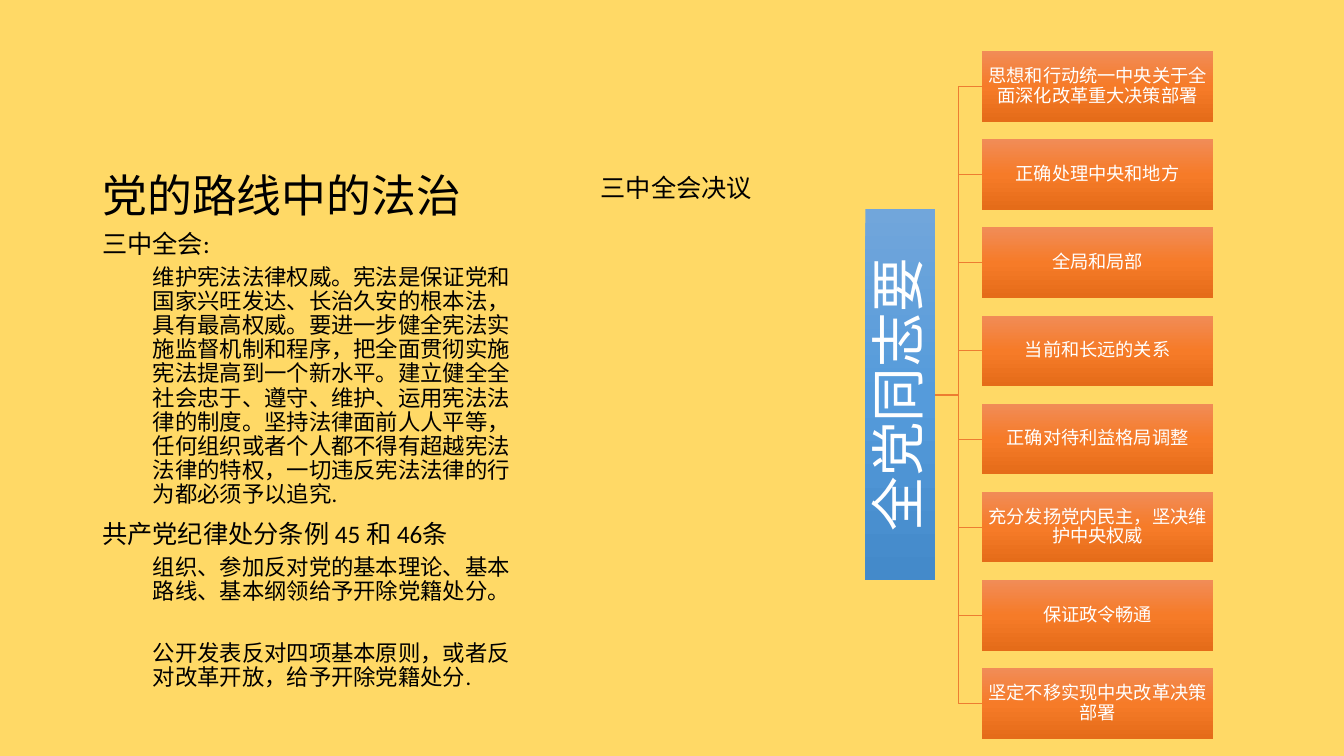
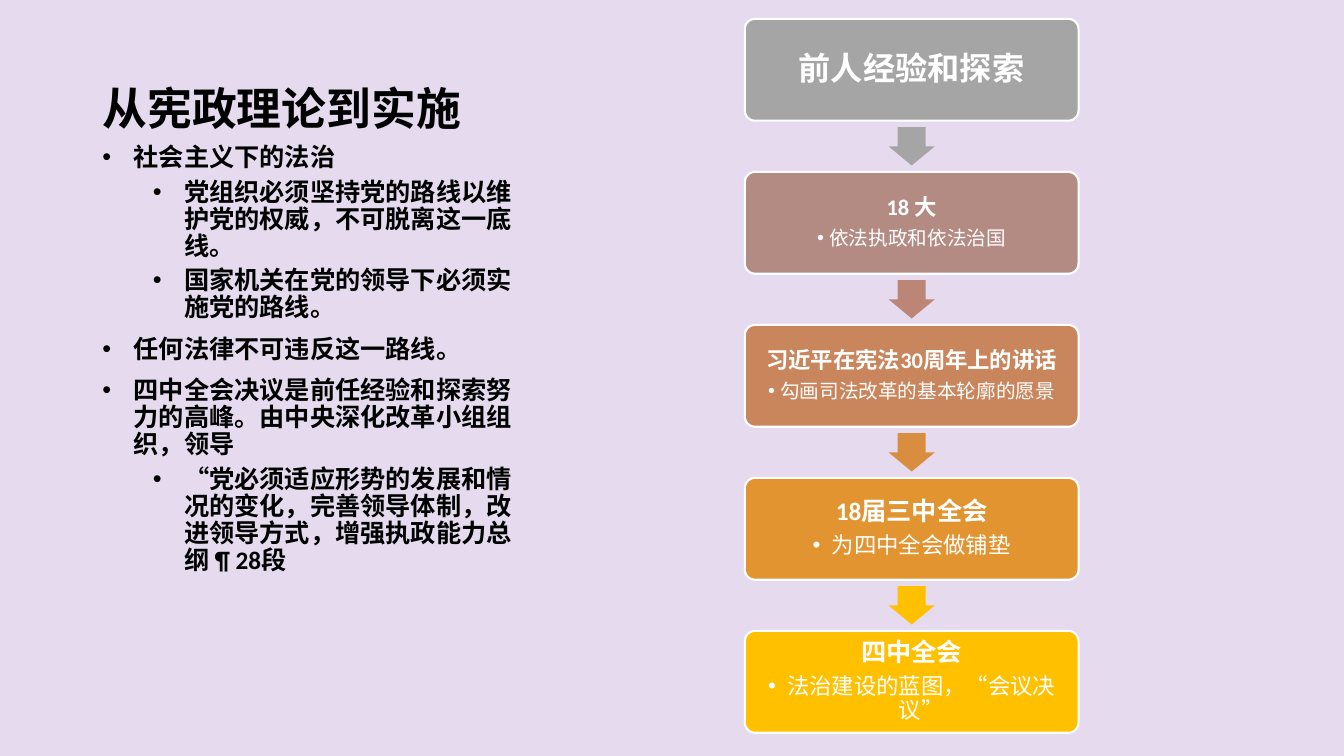
from lxml import etree
from pptx import Presentation
from pptx.dml.color import RGBColor
from pptx.enum.lang import MSO_LANGUAGE_ID as Language
from pptx.enum.shapes import MSO_CONNECTOR as Connector, MSO_SHAPE as Shape
from pptx.enum.text import MSO_ANCHOR as Anchor, MSO_AUTO_SIZE as AutoSize, PP_ALIGN as Align
from pptx.oxml.ns import qn
from pptx.util import Inches, Pt

WIDTH, HEIGHT = Inches(13.33), Inches(7.5)
FONT = "Calibri"
BLACK, WHITE = "000000", "FFFFFF"
YELLOW, LILAC, ORANGE = "FFD966", "E5DAEE", "ED7D31"
BLUE_GRADIENT = ("71A6DB", "559BDB", "448ACA")
ORANGE_GRADIENT = ("F18C57", "F67B28", "E56C19")
TITLE_ONLY = 5
RIGHT_SITE, LEFT_SITE = 3, 1

# Text column, in percent of the slide's width and height
TEXT_LEFT, TEXT_WIDTH = 6.88, 32.25
TITLE_TOP, TEXT_BOTTOM = 6.67, 97.5

RULE_OF_LAW = [
    (0, "三中全会:", 0),
    (1, "维护宪法法律权威。宪法是保证党和国家兴旺发达、长治久安的根本法，具有最高权威。"
        "要进一步健全宪法实施监督机制和程序，把全面贯彻实施宪法提高到一个新水平。"
        "建立健全全社会忠于、遵守、维护、运用宪法法律的制度。坚持法律面前人人平等，"
        "任何组织或者个人都不得有超越宪法法律的特权，一切违反宪法法律的行为都必须予以追究.", 5),
    (0, "共产党纪律处分条例 45 和 46条", 10),
    (1, "组织、参加反对党的基本理论、基本路线、基本纲领给予开除党籍处分。", 5),
    (1, "公开发表反对四项基本原则，或者反对改革开放，给予开除党籍处分.", 27),
]
DUTIES = [
    "思想和行动统一中央关于全面深化改革重大决策部署",
    "正确处理中央和地方",
    "全局和局部",
    "当前和长远的关系",
    "正确对待利益格局调整",
    "充分发扬党内民主，坚决维护中央权威",
    "保证政令畅通",
    "坚定不移实现中央改革决策部署",
]
THEORY = [
    (0, "社会主义下的法治", 0),
    (1, "党组织必须坚持党的路线以维护党的权威，不可脱离这一底线。", 5),
    (1, "国家机关在党的领导下必须实施党的路线。", 5),
    (0, "任何法律不可违反这一路线。", 10),
    (0, "四中全会决议是前任经验和探索努力的高峰。由中央深化改革小组组织，领导", 10),
    (1, "“党必须适应形势的发展和情况的变化，完善领导体制，改进领导方式，"
        "增强执政能力总纲 ¶ 28段", 5),
]
# Heading, its size, detail, its size, bullet indent in inches, card colour
STAGES = [
    ("前人经验和探索", 23, None, 0, 0, "A5A5A5"),
    ("18 大", 16, "依法执政和依法治国", 14, 0.12, "B48B83"),
    ("习近平在宪法30周年上的讲话", 16, "勾画司法改革的基本轮廓的愿景", 14, 0.12, "C9855C"),
    ("18届三中全会", 18, "为四中全会做铺垫", 16, 0.19, "E19430"),
    ("四中全会", 18, "法治建设的蓝图，“会议决议”", 16, 0.19, "FFC000"),
]
ARROW_COLORS = ["A5A5A5", "BB8676", "D98D3F", "FFC000"]


def color(hex_string):
    return RGBColor.from_string(hex_string)


def area(left, top, width, height):
    """Turn percentages of the slide into a position and a size."""
    return (round(WIDTH * left / 100), round(HEIGHT * top / 100),
            round(WIDTH * width / 100), round(HEIGHT * height / 100))


def indent(paragraph, left, hanging=0):
    """Set the left margin in inches; a hanging indent gets a bullet."""
    properties = paragraph._p.get_or_add_pPr()
    properties.set("marL", str(Inches(left)))
    properties.set("indent", str(-Inches(hanging)))
    if hanging:
        etree.SubElement(properties, qn("a:buFont")).set("typeface", "Arial")
        etree.SubElement(properties, qn("a:buChar")).set("char", "•")


def style(paragraph, size, font_color, bold=False, align=Align.LEFT, before=0, after=0):
    paragraph.alignment = align
    paragraph.line_spacing = 0.9
    paragraph.space_before, paragraph.space_after = Pt(before), Pt(after)
    for run in paragraph.runs:
        font = run.font
        font.name, font.size, font.bold = FONT, Pt(size), bold
        font.color.rgb = color(font_color)
        font.language_id = Language.SIMPLIFIED_CHINESE


def add_titled_slide(presentation, background, title, title_bottom, bold=False):
    slide = presentation.slides.add_slide(presentation.slide_layouts[TITLE_ONLY])
    fill = slide.background.fill
    fill.solid()
    fill.fore_color.rgb = color(background)
    shape = slide.shapes.title
    shape.left, shape.top, shape.width, shape.height = area(
        TEXT_LEFT, TITLE_TOP, TEXT_WIDTH, title_bottom - TITLE_TOP)
    frame = shape.text_frame
    frame.text = title
    frame.auto_size = AutoSize.NONE
    frame.vertical_anchor = Anchor.BOTTOM
    style(frame.paragraphs[0], 32, BLACK, bold)
    return slide


def add_outline(slide, top, items, sizes, bold=False, hanging=0):
    """Add the two-level text below the title; sizes holds one size per level."""
    box = slide.shapes.add_textbox(*area(TEXT_LEFT, top, TEXT_WIDTH, TEXT_BOTTOM - top))
    frame = box.text_frame
    frame.word_wrap = True
    frame.text = "\n".join(text for _, text, _ in items)
    for paragraph, (level, _, before) in zip(frame.paragraphs, items):
        paragraph.level = level
        indent(paragraph, level * 0.5 + hanging, hanging)
        style(paragraph, sizes[level], BLACK, bold, before=before)


def add_label(slide, place, text, size):
    frame = slide.shapes.add_textbox(*area(*place)).text_frame
    frame.word_wrap = False
    frame.text = text
    style(frame.paragraphs[0], size, BLACK)


def add_block(slide, preset, place, fill_color=None, inset=0.0):
    """Add a shape without line or shadow, ready for centred text."""
    shape = slide.shapes.add_shape(preset, *area(*place))
    shape.shadow.inherit = False
    shape.line.fill.background()
    if fill_color:
        shape.fill.solid()
        shape.fill.fore_color.rgb = color(fill_color)
    frame = shape.text_frame
    frame.word_wrap = True
    frame.vertical_anchor = Anchor.MIDDLE
    frame.margin_left = frame.margin_right = Inches(inset)
    frame.margin_top = frame.margin_bottom = Inches(inset)
    return shape


def fill_gradient(shape, colors):
    """Fill from top to bottom with evenly spaced colours."""
    shape.fill.gradient()
    shape.fill.gradient_angle = 270
    stops = shape._element.spPr.find(qn("a:gradFill")).find(qn("a:gsLst"))
    for stop in list(stops):
        stops.remove(stop)
    for index, stop_color in enumerate(colors):
        stop = etree.SubElement(stops, qn("a:gs"))
        stop.set("pos", str(index * 100000 // (len(colors) - 1)))
        etree.SubElement(stop, qn("a:srgbClr")).set("val", stop_color)


def add_gradient_block(slide, place, text, size, colors, inset):
    shape = add_block(slide, Shape.RECTANGLE, place, inset=inset)
    fill_gradient(shape, colors)
    shape.text_frame.text = text
    style(shape.text_frame.paragraphs[0], size, WHITE, align=Align.CENTER)
    return shape


def add_branch(slide, root, leaf):
    branch = slide.shapes.add_connector(Connector.ELBOW, 0, 0, 0, 0)
    branch.begin_connect(root, RIGHT_SITE)
    branch.end_connect(leaf, LEFT_SITE)
    branch.line.color.rgb = color(ORANGE)
    branch.line.width = Pt(0.5)
    etree.SubElement(branch._element.spPr, qn("a:effectLst"))


def add_duty_tree(slide):
    top, height = 6.75, 9.33
    pitch = height * 1.25
    root_height = 49.07
    middle = top + (pitch * (len(DUTIES) - 1) + height) / 2
    root = add_gradient_block(slide, (64.38, middle - root_height / 2, 5.22, root_height),
                              "全党同志要", 39, BLUE_GRADIENT, 0.03)
    root.text_frame._txBody.bodyPr.set("vert", "vert270")
    for index, duty in enumerate(DUTIES):
        leaf = add_gradient_block(slide, (73.07, top + index * pitch, 17.18, height),
                                  duty, 13, ORANGE_GRADIENT, 0.01)
        add_branch(slide, root, leaf)


def add_stage_card(slide, place, heading, heading_size, detail, detail_size, hanging, fill_color):
    card = add_block(slide, Shape.ROUNDED_RECTANGLE, place, fill_color, 0.1)
    card.adjustments[0] = 0.1
    card.line.color.rgb = color(WHITE)
    card.line.width = Pt(1.5)
    frame = card.text_frame
    frame.text = heading
    style(frame.paragraphs[0], heading_size, WHITE, True, Align.CENTER,
          after=round(heading_size * 0.35) if detail else 0)
    if detail:
        paragraph = frame.add_paragraph()
        paragraph.text = detail
        paragraph.level = 1
        indent(paragraph, hanging, hanging)
        style(paragraph, detail_size, WHITE, align=Align.CENTER)


def add_stage_flow(slide):
    left, top, width, height, pitch = 55.42, 2.5, 24.83, 13.47, 20.24
    arrow_width, arrow_height = 3.45, 5.07
    for index, stage in enumerate(STAGES):
        add_stage_card(slide, (left, top + index * pitch, width, height), *stage)
    arrow_left = left + (width - arrow_width) / 2
    arrow_top = top + (height + pitch - arrow_height) / 2
    for index, arrow_color in enumerate(ARROW_COLORS):
        arrow = add_block(slide, Shape.DOWN_ARROW,
                          (arrow_left, arrow_top + index * pitch, arrow_width, arrow_height),
                          arrow_color)
        arrow.adjustments[0], arrow.adjustments[1] = 0.6, 0.5


def main():
    presentation = Presentation()
    presentation.slide_width, presentation.slide_height = WIDTH, HEIGHT

    party_line = add_titled_slide(presentation, YELLOW, "党的路线中的法治", 30)
    add_outline(party_line, 30, RULE_OF_LAW, (18, 16))
    add_duty_tree(party_line)
    add_label(party_line, (43.95, 22.53, 12.9, 5.33), "三中全会决议", 18)

    practice = add_titled_slide(presentation, LILAC, "从宪政理论到实施", 18.53, bold=True)
    add_stage_flow(practice)
    add_outline(practice, 18.53, THEORY, (18, 18), bold=True, hanging=0.31)

    presentation.save("out.pptx")


if __name__ == "__main__":
    main()
